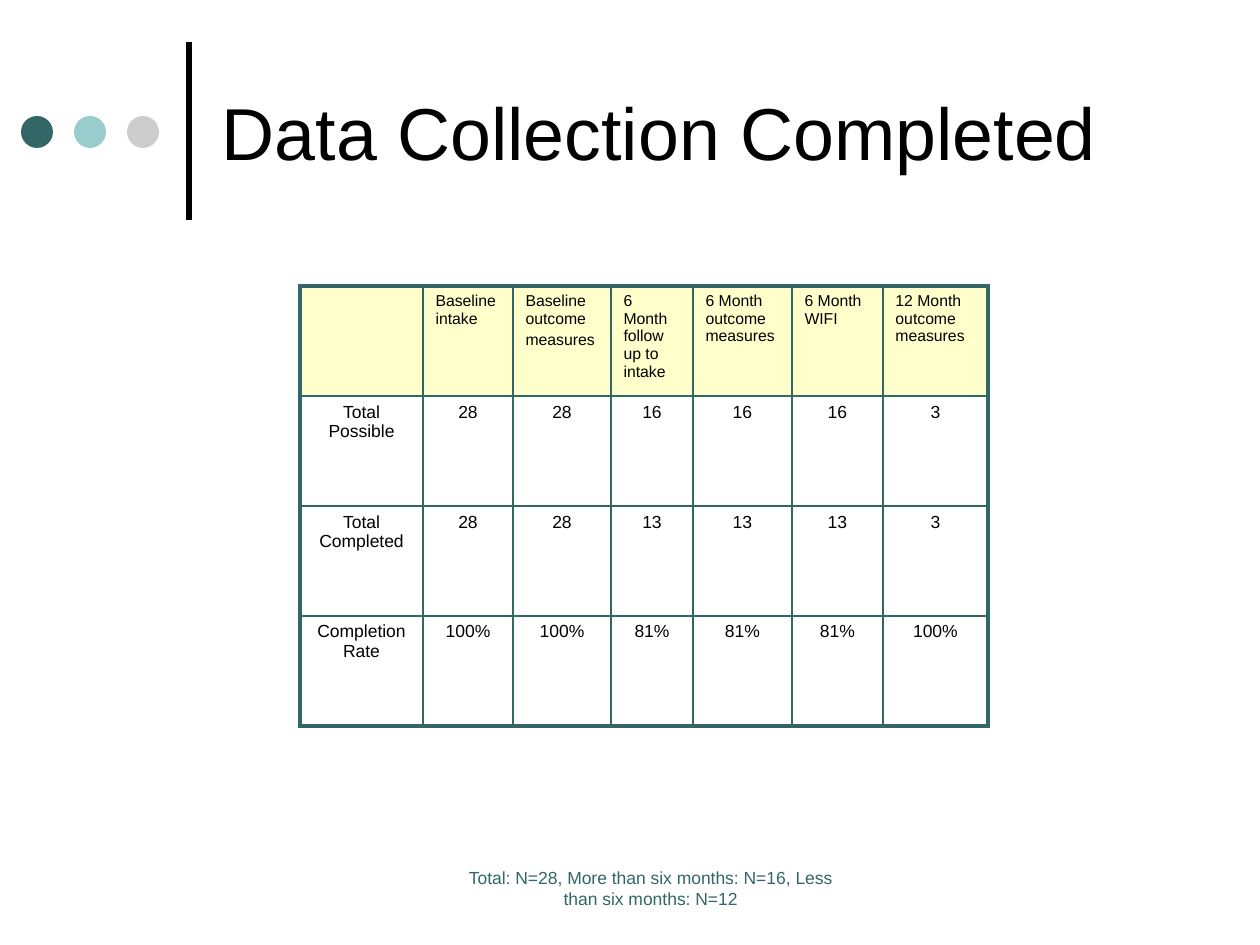
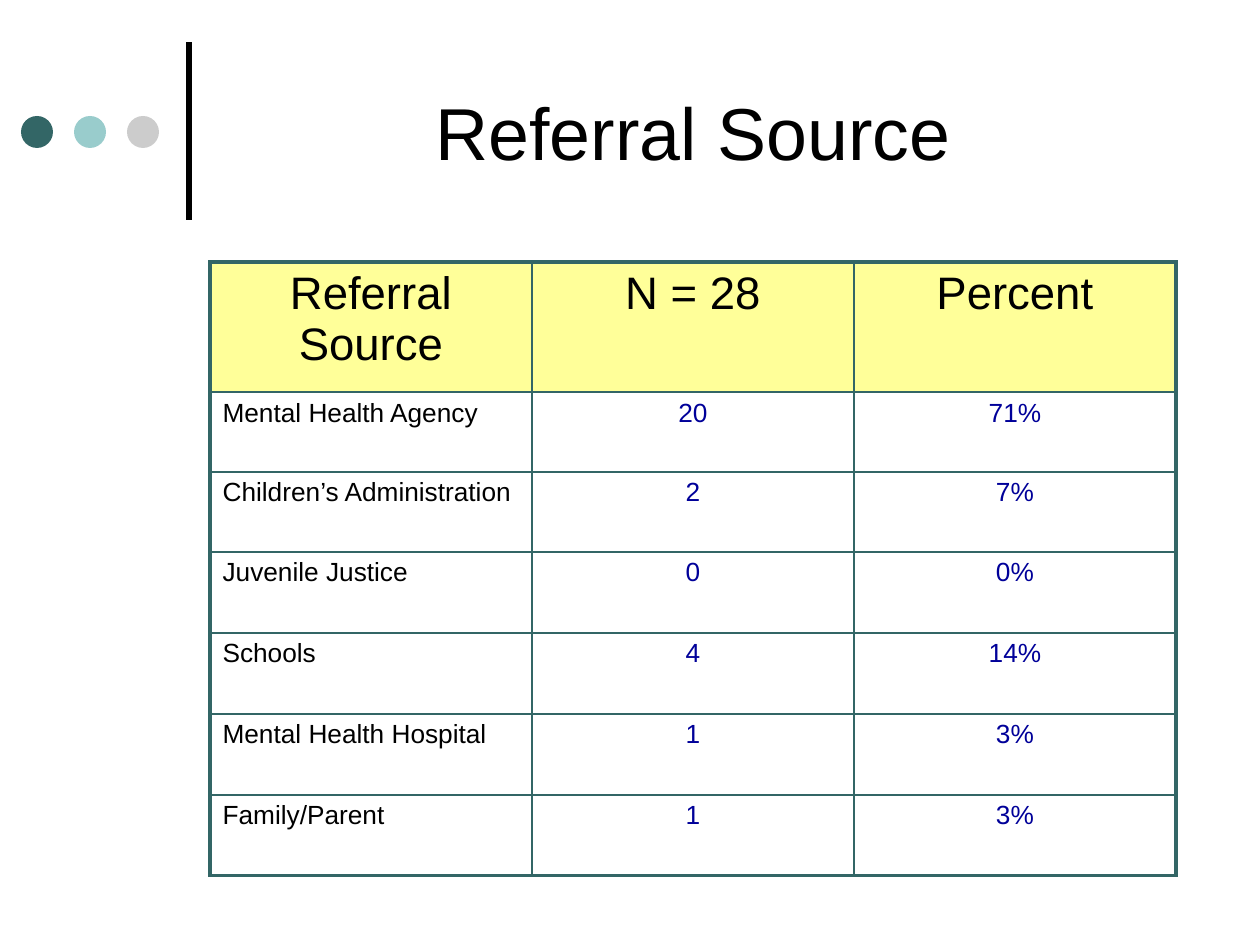
import pptx
import pptx.util
import pptx.dml.color
import pptx.enum.shapes
import pptx.enum.text
import pptx.oxml.ns
from lxml import etree

RGB = pptx.dml.color.RGBColor
BLACK = RGB(0x00, 0x00, 0x00)
TEAL = RGB(0x33, 0x66, 0x66)
AQUA = RGB(0x99, 0xCC, 0xCC)
GREY = RGB(0xCC, 0xCC, 0xCC)
YELLOW = RGB(0xFF, 0xFF, 0x99)
NAVY = RGB(0x00, 0x00, 0x99)

FONT = "Arial"
ALIGN = pptx.enum.text.PP_ALIGN
ANCHOR = pptx.enum.text.MSO_ANCHOR
TITLE_BOX = (210, 26, 966, 210)
THICK, THIN = 2.25, 1

qn = pptx.oxml.ns.qn
Pt = pptx.util.Pt


def px(n):
    """Pixels at 126 to the inch, as EMU."""
    return pptx.util.Emu(round(n * 914400 / 126))


def place(box):
    return [px(n) for n in box]


def write(tf, text, size, color, align):
    tf.text = text
    for i, p in enumerate(tf.paragraphs):
        p.alignment = align
        if i:
            p.space_before = Pt(0.2 * size)
        for r in p.runs:
            r.font.name = FONT
            r.font.size = Pt(size)
            r.font.color.rgb = color


def add_margin_motif(s):
    # Vertical rule beside the title
    rule = s.shapes.add_connector(
        pptx.enum.shapes.MSO_CONNECTOR.STRAIGHT, px(189), px(220), px(189), px(42))
    rule.line.color.rgb = BLACK
    rule.line.width = Pt(3)
    etree.SubElement(rule._element.spPr, qn("a:effectLst"))
    # Row of three dots
    for i, color in enumerate((TEAL, AQUA, GREY)):
        dot = s.shapes.add_shape(
            pptx.enum.shapes.MSO_SHAPE.OVAL, *place((21 + 53 * i, 116, 32, 32)))
        dot.shadow.inherit = False
        dot.fill.solid()
        dot.fill.fore_color.rgb = color
        dot.line.fill.background()


def add_titled_slide(prs, title, shift=0):
    """Add a slide with the shared look; shift moves the centred title left."""
    s = prs.slides.add_slide(prs.slide_layouts[5])
    add_margin_motif(s)
    sp = s.shapes.title
    sp.left, sp.top, sp.width, sp.height = place(TITLE_BOX)
    tf = sp.text_frame
    tf.auto_size = pptx.enum.text.MSO_AUTO_SIZE.NONE
    tf.word_wrap = True
    tf.vertical_anchor = ANCHOR.MIDDLE
    tf.margin_left, tf.margin_right = 0, px(2 * shift)
    write(tf, title, 42, BLACK, ALIGN.CENTER)
    return s


def set_borders(cell, widths):
    """Put left, right, top and bottom lines ahead of the cell's fill."""
    tcPr = cell._tc.get_or_add_tcPr()
    for i, (side, width) in enumerate(zip("LRTB", widths)):
        ln = etree.Element(qn(f"a:ln{side}"), w=str(Pt(width)))
        fill = etree.SubElement(ln, qn("a:solidFill"))
        etree.SubElement(fill, qn("a:srgbClr"), val=str(TEAL))
        tcPr.insert(i, ln)


def add_grid(s, left, top, cols, rows, data, style, header_alpha=100):
    """Add a ruled table; style(row, col) gives size, colour and alignment."""
    box = (left, top, sum(cols), sum(rows))
    table = s.shapes.add_table(len(rows), len(cols), *place(box)).table
    table.first_row = table.horz_banding = False
    for column, width in zip(table.columns, cols):
        column.width = px(width)
    for row, height in zip(table.rows, rows):
        row.height = px(height)
    last_row, last_col = len(rows) - 1, len(cols) - 1
    for i, values in enumerate(data):
        for j, text in enumerate(values):
            cell = table.cell(i, j)
            write(cell.text_frame, text, *style(i, j))
            if i == 0:
                cell.fill.solid()
                cell.fill.fore_color.rgb = YELLOW
                if header_alpha < 100:
                    clr = cell._tc.tcPr.find(".//" + qn("a:srgbClr"))
                    etree.SubElement(clr, qn("a:alpha"), val=str(header_alpha * 1000))
            else:
                cell.fill.background()
            outer = (j == 0, j == last_col, i == 0, i == last_row)
            set_borders(cell, [THICK if edge else THIN for edge in outer])


def add_note(s, box, text):
    tf = s.shapes.add_textbox(*place(box)).text_frame
    tf.word_wrap = True
    write(tf, text, 10, TEAL, ALIGN.CENTER)


def collection_style(i, j):
    return (10, BLACK, ALIGN.CENTER) if i else (9, BLACK, ALIGN.LEFT)


def referral_style(i, j):
    if i == 0:
        return 26, BLACK, ALIGN.CENTER
    return (15, NAVY, ALIGN.CENTER) if j else (15, BLACK, ALIGN.LEFT)


def build_collection_slide(prs):
    s = add_titled_slide(prs, "Data Collection Completed", shift=34)
    data = [
        ("", "Baseline intake", "Baseline outcome\nmeasures",
         "6 Month follow up to intake", "6 Month outcome measures",
         "6 Month WIFI", "12 Month outcome measures"),
        ("Total Possible", "28", "28", "16", "16", "16", "3"),
        ("Total Completed", "28", "28", "13", "13", "13", "3"),
        ("Completion Rate", "100%", "100%", "81%", "81%", "81%", "100%"),
    ]
    add_grid(s, 300, 286, (123, 90, 98, 82, 99, 91, 105), [110] * 4,
             data, collection_style, header_alpha=50)
    add_note(s, (451, 861, 399, 63),
             "Total: N=28, More than six months: N=16, Less than six months: N=12")


def build_referral_slide(prs):
    s = add_titled_slide(prs, "Referral Source")
    data = [
        ("Referral Source", "N = 28", "Percent"),
        ("Mental Health Agency", "20", "71%"),
        ("Children’s Administration", "2", "7%"),
        ("Juvenile Justice", "0", "0%"),
        ("Schools", "4", "14%"),
        ("Mental Health Hospital", "1", "3%"),
        ("Family/Parent", "1", "3%"),
    ]
    add_grid(s, 210, 262, [322] * 3, [130] + [80] * 2 + [81] * 4,
             data, referral_style)


def main():
    prs = pptx.Presentation()
    prs.slide_width, prs.slide_height = px(1260), px(945)
    build_collection_slide(prs)
    build_referral_slide(prs)
    prs.save("out.pptx")


if __name__ == "__main__":
    main()
